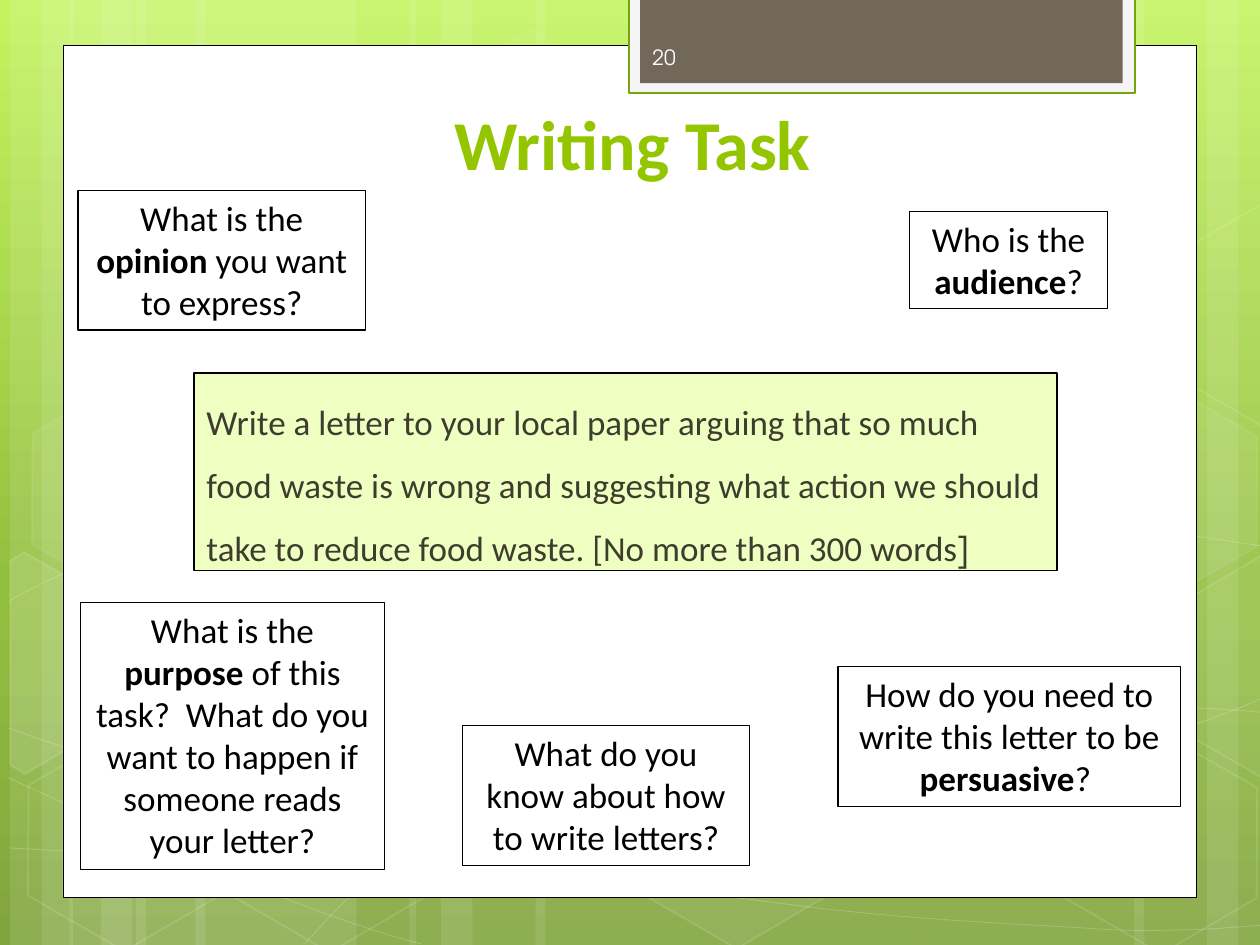
from math import cos, radians, sin

from lxml.etree import SubElement
from pptx import Presentation
from pptx.dml.color import RGBColor
from pptx.enum.shapes import MSO_SHAPE
from pptx.enum.text import MSO_ANCHOR, PP_ALIGN
from pptx.oxml.ns import qn
from pptx.util import Inches, Pt

WHITE, BLACK, GREEN = "FFFFFF", "000000", "94C600"
BODY_FONT, NUMBER_FONT = "Calibri", "TeX Gyre Adventor"
TILT = 30


def color(value):
    return RGBColor.from_string(value)


def paint(fill, value, opacity=100):
    """Fill with a colour; opacity is a percentage."""
    fill.solid()
    fill.fore_color.rgb = color(value)
    if opacity < 100:
        node = fill._xPr.find(qn("a:solidFill"))[0]
        SubElement(node, qn("a:alpha"), val=str(opacity * 1000))


def style(shape, fill=None, opacity=100, line=None, width=0.75, line_opacity=100):
    shape.shadow.inherit = False
    if fill and opacity:
        paint(shape.fill, fill, opacity)
    else:
        shape.fill.background()
    if line:
        paint(shape.line.fill, line, line_opacity)
        shape.line.width = Pt(width)
    else:
        shape.line.fill.background()


def add_box(slide, box, kind=MSO_SHAPE.RECTANGLE, **look):
    shape = slide.shapes.add_shape(kind, *map(Inches, box))
    style(shape, **look)
    return shape


def add_outline(slide, points, close, **look):
    points = [(Inches(x), Inches(y)) for x, y in points]
    builder = slide.shapes.build_freeform(*points[0])
    builder.add_line_segments(points[1:], close=close)
    shape = builder.convert_to_shape()
    style(shape, **look)
    return shape


def bend(shape):
    """Turn every three line segments into one cubic curve."""
    outline = shape._element.find(".//" + qn("a:path"))
    lines = outline.findall(qn("a:lnTo"))
    for index in range(0, len(lines), 3):
        curve = SubElement(outline, qn("a:cubicBezTo"))
        for line in lines[index:index + 3]:
            curve.append(line[0])
            outline.remove(line)


def add_text(shape, runs, size=20, font=BODY_FONT, fill=BLACK, bold=(),
             align=PP_ALIGN.LEFT, anchor=MSO_ANCHOR.TOP, spacing=None, fonts=None):
    """Write the runs; bold holds the indexes of bold runs, fonts maps index to font."""
    frame = shape.text_frame
    frame.word_wrap = True
    frame.vertical_anchor = anchor
    paragraph = frame.paragraphs[0]
    paragraph.alignment = align
    if spacing:
        paragraph.line_spacing = spacing
    for index, text in enumerate(runs):
        run = paragraph.add_run()
        run.text = text
        run.font.size = Pt(size)
        run.font.name = (fonts or {}).get(index, font)
        run.font.bold = index in bold
        run.font.color.rgb = color(fill)


def add_gradient(slide):
    fill = slide.background.fill
    fill.gradient()
    fill.gradient_angle = 270
    stops = slide.element.find(".//" + qn("a:gsLst"))
    for stop in list(stops):
        stops.remove(stop)
    for position, value in ((0, "C3F35F"), (62, "93BF3F"), (100, "81A53E")):
        stop = SubElement(stops, qn("a:gs"), pos=str(position * 1000))
        SubElement(stop, qn("a:srgbClr"), val=value)


def add_stripes(slide, box):
    left, top, width, height = box
    stripes = [(offset + x, w) for offset in (0, 0.47)
               for x, w in ((1.08, 1.75), (0.08, 0.5), (0.33, 0.83))]
    stripes += [(7.33, 1.75), (9.58, 0.5), (9, 0.83), (4.25, 3.08), (3.25, 0.5), (3.5, 0.83)]
    for x, stripe_width in stripes:
        add_box(slide, (left + x, top, stripe_width, height), fill=WHITE, opacity=10)


def add_waves(slide, box):
    left, top = box[:2]
    # Each wave: start, then two control points and an end for every curve
    waves = [
        [(0.07, 6.73), (0.61, 6.76), (1.15, 6.79), (1.9, 6.78), (2.65, 6.77), (3.58, 6.75),
         (4.58, 6.65), (5.58, 6.55), (7, 6.36), (7.92, 6.17), (8.83, 5.98), (9.77, 5.68),
         (10.07, 5.51)],
        [(0.07, 4.77), (0.36, 4.61), (0.65, 4.46), (1.21, 4.31), (1.78, 4.16), (2.59, 3.94),
         (3.47, 3.87), (4.36, 3.8), (5.44, 3.79), (6.54, 3.87), (7.64, 3.95), (9.47, 4.26),
         (10.07, 4.34)],
        [(0.06, 6.17), (1.27, 6.72), (2.47, 7.27), (3.34, 7.49)],
        [(0.07, 5.78), (0.38, 5.89), (0.7, 6), (1.28, 6.16), (1.86, 6.31), (2.73, 6.56),
         (3.57, 6.73), (4.4, 6.9), (5.45, 7.08), (6.28, 7.18), (7.11, 7.29), (8, 7.33),
         (8.53, 7.36), (9.05, 7.4), (9.19, 7.38), (9.45, 7.38), (9.71, 7.37), (9.89, 7.35),
         (10.07, 7.34)],
        [(2.42, 7.49), (2.6, 7.29), (2.78, 7.09), (3.02, 6.91), (3.26, 6.73), (3.6, 6.53),
         (3.88, 6.39), (4.16, 6.25), (4.33, 6.19), (4.7, 6.09), (5.06, 5.99), (5.73, 5.85),
         (6.08, 5.78), (6.44, 5.71), (6.49, 5.71), (6.8, 5.69), (7.11, 5.66), (7.6, 5.63),
         (7.94, 5.62), (8.29, 5.61), (8.86, 5.62), (8.86, 5.62), (9.08, 5.62), (9.31, 5.62),
         (9.53, 5.62), (9.71, 5.63), (9.88, 5.64), (9.97, 5.65), (10.06, 5.66), (10.03, 5.65),
         (10.06, 5.66)],
    ]
    for points in waves:
        bend(add_outline(slide, [(left + x, top + y) for x, y in points], False,
                         line=WHITE, width=0.5, line_opacity=20))


def turn_back(point, center):
    """Undo the tilt of a point around a center."""
    x, y = point[0] - center[0], point[1] - center[1]
    c, s = cos(radians(TILT)), sin(radians(TILT))
    return center[0] + x * c + y * s, center[1] - x * s + y * c


def add_hexagons(slide, box):
    left, top = box[:2]
    # Whole hexagons: position, fill opacity, line opacity
    for x, y, opacity, line_opacity in (
            (3.34, 0.36, 4, 8), (4.97, 5.89, 6, 12), (0.11, 5.91, 0, 12),
            (0.14, 3.12, 7, 8), (1.74, 5.92, 0, 12), (7.53, 4.53, 10, 12),
            (8.34, 5.93, 0, 12), (8.34, 3.14, 7, 8)):
        hexagon = add_box(slide, (left + x, top + y, 1.75, 1.52), MSO_SHAPE.HEXAGON,
                          fill=WHITE, opacity=opacity,
                          line=WHITE, width=1, line_opacity=line_opacity)
        hexagon.rotation = TILT
        hexagon.adjustments[0] = 0.285
        hexagon.adjustments[1] = 1.155
    # Hexagons cut by the slide edges: corners, center, rise, fill opacity
    left_cut = [(0.08, 4.45), (0.19, 4.38), (0.96, 4.82),
                (0.95, 5.7), (0.2, 6.14), (0.08, 6.07)]
    right_cut = [(9.26, 4.85), (10.01, 4.41), (10.09, 4.46),
                 (10.09, 6.13), (10.02, 6.17), (9.26, 5.73)]
    for corners, center, rise, opacity in ((left_cut, (0.36, 5.35), 0, 10),
                                           (right_cut, (9.85, 5.2), 0, 4),
                                           (right_cut, (9.85, 5.2), 2.79, 0)):
        points = [turn_back(corner, center) for corner in corners]
        cut = add_outline(slide, [(left + x, top + y - rise) for x, y in points], True,
                          fill=WHITE, opacity=opacity, line=WHITE, width=1, line_opacity=12)
        cut.rotation = TILT


def add_number_tab(slide, box):
    left, top, width, height = box
    add_box(slide, box, fill="F5F5F5", line="74A510", width=1.25)
    add_box(slide, (left + 0.09, top, width - 0.19, height - 0.08), fill="71685A")
    number = slide.shapes.add_textbox(*map(Inches, (left + 0.09, top + 0.27, 1.46, 0.4)))
    add_text(number, ["20"], size=12, font=NUMBER_FONT, fill="FEFEFE",
             anchor=MSO_ANCHOR.MIDDLE)


def add_title(slide, box):
    title = slide.shapes.add_textbox(*map(Inches, box))
    add_text(title, ["Writing Task"], size=40, fill=GREEN, bold=(0,),
             align=PP_ALIGN.CENTER, anchor=MSO_ANCHOR.BOTTOM)


def add_task(slide, box):
    task = add_box(slide, box, fill="EFFFC1", line=BLACK)
    add_text(task, ["Write a letter to your local paper arguing that so much food waste is wrong "
                    "and suggesting what action we should take to reduce food waste. "
                    "[No more than 300 words", "]"],
             fill="3E3D2D", spacing=1.5, fonts={1: NUMBER_FONT})


def add_question(slide, box, runs):
    question = add_box(slide, box, line=BLACK)
    add_text(question, runs, bold=(1,), align=PP_ALIGN.CENTER)


def main():
    presentation = Presentation()
    presentation.slide_width, presentation.slide_height = Inches(10), Inches(7.5)
    slide = presentation.slides.add_slide(presentation.slide_layouts[6])

    # Background
    add_gradient(slide)
    for add_layer in (add_stripes, add_waves, add_hexagons):
        add_layer(slide, (0, 0, 10, 7.5))

    # Panel, tab, title and task
    add_box(slide, (0.5, 0.36, 9, 6.76), fill=WHITE, line=BLACK, width=0.5)
    add_number_tab(slide, (4.99, -0.02, 4.02, 0.76))
    add_title(slide, (0.52, 0.68, 9, 0.83))
    add_task(slide, (1.54, 2.96, 6.85, 1.57))

    # Questions around the task; the second run is the key word
    for box, runs in (
            ((7.22, 1.68, 1.57, 0.77), ["Who is the ", "audience", "?"]),
            ((0.62, 1.51, 2.28, 1.11), ["What is the ", "opinion ", "you want to express?"]),
            ((0.64, 4.78, 2.41, 2.12),
             ["What is the ", "purpose",
              " of this task?  What do you want to happen if someone reads your letter?"]),
            ((6.65, 5.29, 2.72, 1.11),
             ["How do you need to write this letter to be ", "persuasive", "? "]),
            ((3.67, 5.76, 2.28, 1.11), ["What do you know about how to write letters?"])):
        add_question(slide, box, runs)
    presentation.save("out.pptx")


if __name__ == "__main__":
    main()
